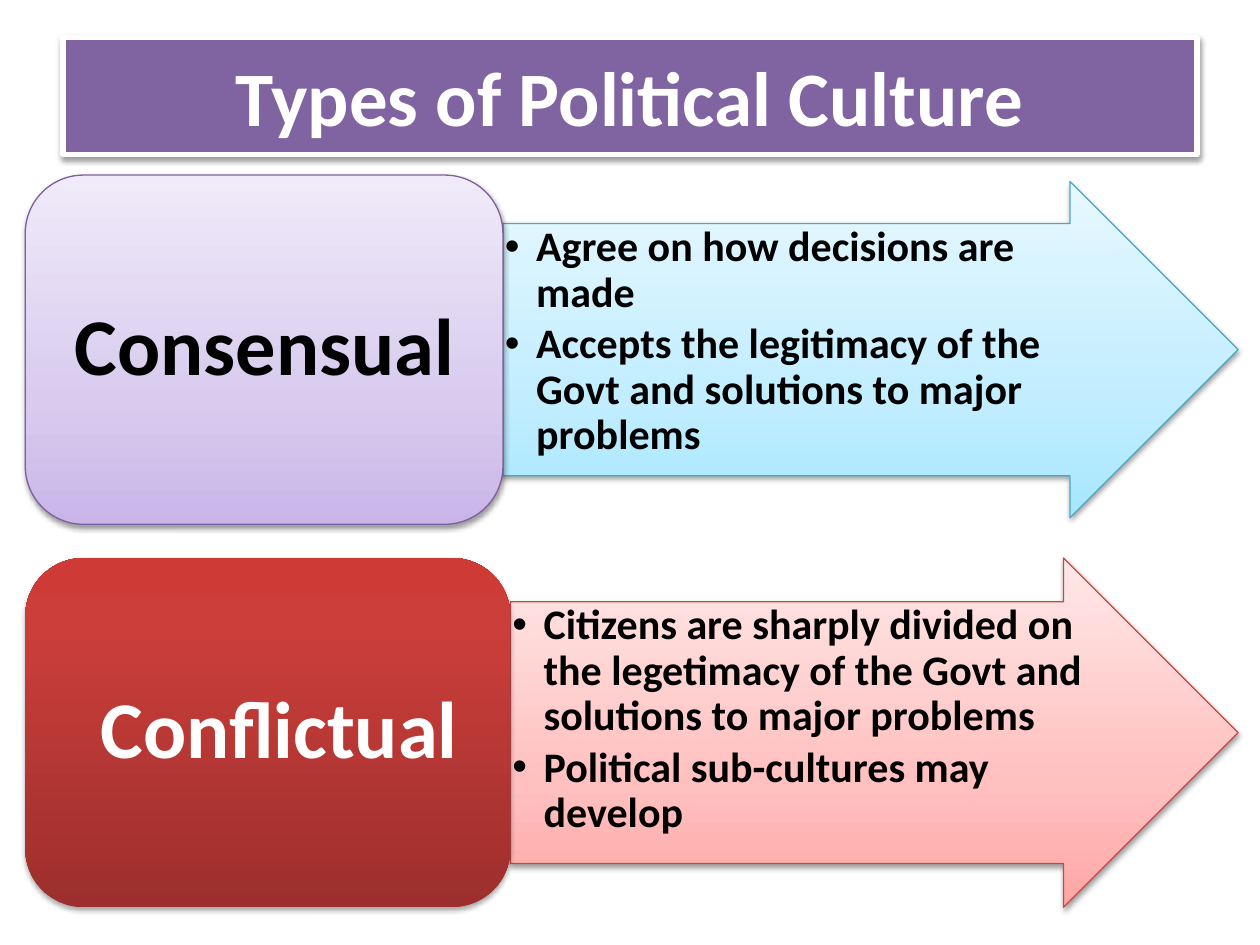
"""Build a slide that contrasts the consensual and conflictual types of political culture."""
from lxml.etree import SubElement
from pptx import Presentation
from pptx.dml.color import RGBColor
from pptx.enum.shapes import MSO_SHAPE
from pptx.enum.text import MSO_ANCHOR, PP_ALIGN
from pptx.oxml.ns import qn
from pptx.util import Cm, Pt

COLORS = {"title": "8064A2", "white": "FFFFFF", "black": "000000",
          "purple_line": "7D60A0", "blue_line": "46AAC5", "red_line": "BF4C48"}
GRADIENTS = {
    "purple": [(0, "C9B5E8"), (35, "D8CBEE"), (100, "F0EAF9")],
    "blue": [(0, "A7E6FF"), (35, "C1EDFF"), (100, "E7F8FF")],
    "red": [(0, "9C2F2D"), (80, "CB3E3A"), (100, "CE3B37")],
    "pink": [(0, "FFA6A5"), (35, "FFC0BF"), (100, "FFE7E7")],
}
TITLE = "Types of Political Culture"
CULTURES = [
    {"name": "Consensual ", "name_color": "black", "box_width": 9.63,
     "box_fill": "purple", "box_line": "purple_line",
     "arrow_height": 6.78, "arrow_fill": "blue", "arrow_line": "blue_line",
     "points": ["Agree on how decisions are made",
                "Accepts the legitimacy of the Govt and solutions to major problems"]},
    {"name": "Conflictual ", "name_color": "white", "box_width": 9.78,
     "box_fill": "red", "box_line": None,
     "arrow_height": 7.04, "arrow_fill": "pink", "arrow_line": "red_line",
     "points": ["Citizens are sharply divided on the legetimacy of the Govt "
                "and solutions to major problems",
                "Political sub-cultures may develop"]},
]
LEFT, RIGHT, TOP = 0.51, 24.96, 3.53
BOX_HEIGHT, ROW_STEP = 7.04, 7.72
CORNER_INSET = 0.0488
INDENT = Cm(0.63)


def color(name):
    return RGBColor.from_string(COLORS[name])


def add_shadow(shape, alpha=38, distance=20000):
    shape.shadow.inherit = False
    effects = shape._element.spPr.find(qn("a:effectLst"))
    shadow = SubElement(effects, qn("a:outerShdw"), blurRad="40000", dist=str(distance),
                        dir="5400000", rotWithShape="0")
    shade = SubElement(shadow, qn("a:srgbClr"), val=COLORS["black"])
    SubElement(shade, qn("a:alpha"), val=str(alpha * 1000))


def fill_gradient(shape, stops):
    shape.fill.gradient()
    shape.fill.gradient_angle = 90
    stop_list = shape._element.spPr.find(qn("a:gradFill")).find(qn("a:gsLst"))
    for old_stop in list(stop_list):
        stop_list.remove(old_stop)
    for position, value in stops:
        stop = SubElement(stop_list, qn("a:gs"), pos=str(position * 1000))
        SubElement(stop, qn("a:srgbClr"), val=value)


def add_panel(slide, kind, place, gradient, line):
    shape = slide.shapes.add_shape(kind, *map(Cm, place))
    fill_gradient(shape, GRADIENTS[gradient])
    if line:
        shape.line.color.rgb = color(line)
        shape.line.width = Pt(0.75)
        add_shadow(shape)
    else:
        shape.line.fill.background()
        add_shadow(shape, 35, 23000)
    return shape


def add_run(paragraph, text, size, color_name):
    run = paragraph.add_run()
    run.text = text
    run.font.name = "Calibri"
    run.font.size = Pt(size)
    run.font.bold = True
    run.font.color.rgb = color(color_name)


def add_text_frame(slide, place, margin_x, margin_y, anchor):
    frame = slide.shapes.add_textbox(*map(Cm, place)).text_frame
    frame.word_wrap = True
    frame.vertical_anchor = anchor
    frame.margin_left = frame.margin_right = Cm(margin_x)
    frame.margin_top = frame.margin_bottom = Cm(margin_y)
    return frame


def add_title(slide):
    shape = slide.shapes.add_shape(MSO_SHAPE.RECTANGLE, Cm(1.27), Cm(0.76), Cm(22.86), Cm(2.36))
    shape.fill.solid()
    shape.fill.fore_color.rgb = color("title")
    shape.line.color.rgb = color("white")
    shape.line.width = Pt(3)
    add_shadow(shape)
    shape.text_frame.vertical_anchor = MSO_ANCHOR.MIDDLE
    paragraph = shape.text_frame.paragraphs[0]
    paragraph.alignment = PP_ALIGN.CENTER
    add_run(paragraph, TITLE, 44, "white")


def add_points(slide, place, points):
    frame = add_text_frame(slide, place, 0.04, 0.04, MSO_ANCHOR.TOP)
    for index, point in enumerate(points):
        paragraph = frame.add_paragraph() if index else frame.paragraphs[0]
        paragraph.level = 1
        paragraph.line_spacing = 0.9
        paragraph.space_after = Pt(3.6)
        properties = paragraph._p.get_or_add_pPr()
        properties.set("marL", str(INDENT))
        properties.set("indent", str(-INDENT))
        SubElement(properties, qn("a:buFont"), typeface="Arial")
        SubElement(properties, qn("a:buChar"), char="•")
        add_run(paragraph, point, 24, "black")


def add_culture(slide, culture, top):
    width, height = culture["box_width"], culture["arrow_height"]
    arrow_left = LEFT + width
    arrow_top = top + (BOX_HEIGHT - height) / 2
    arrow_width = RIGHT - arrow_left
    arrow = add_panel(slide, MSO_SHAPE.RIGHT_ARROW, (arrow_left, arrow_top, arrow_width, height),
                      culture["arrow_fill"], culture["arrow_line"])
    arrow.adjustments[0] = 0.75
    arrow.adjustments[1] = 0.5
    add_points(slide, (arrow_left, arrow_top + height / 8,
                       arrow_width - height * 0.375, height * 0.75), culture["points"])

    add_panel(slide, MSO_SHAPE.ROUNDED_RECTANGLE, (LEFT, top, width, BOX_HEIGHT),
              culture["box_fill"], culture["box_line"])
    inset = BOX_HEIGHT * CORNER_INSET
    frame = add_text_frame(slide, (LEFT + inset, top + inset, width - 2 * inset,
                                   BOX_HEIGHT - 2 * inset), 0.48, 0.25, MSO_ANCHOR.MIDDLE)
    paragraph = frame.paragraphs[0]
    paragraph.alignment = PP_ALIGN.CENTER
    paragraph.line_spacing = 0.9
    paragraph._p.get_or_add_pPr().set("rtl", "1")
    add_run(paragraph, culture["name"], 46, culture["name_color"])


def main():
    presentation = Presentation()
    presentation.slide_width, presentation.slide_height = Cm(25.4), Cm(19.05)
    slide = presentation.slides.add_slide(presentation.slide_layouts[6])
    add_title(slide)
    for row, culture in enumerate(CULTURES):
        add_culture(slide, culture, TOP + row * ROW_STEP)
    presentation.save("out.pptx")


if __name__ == "__main__":
    main()
